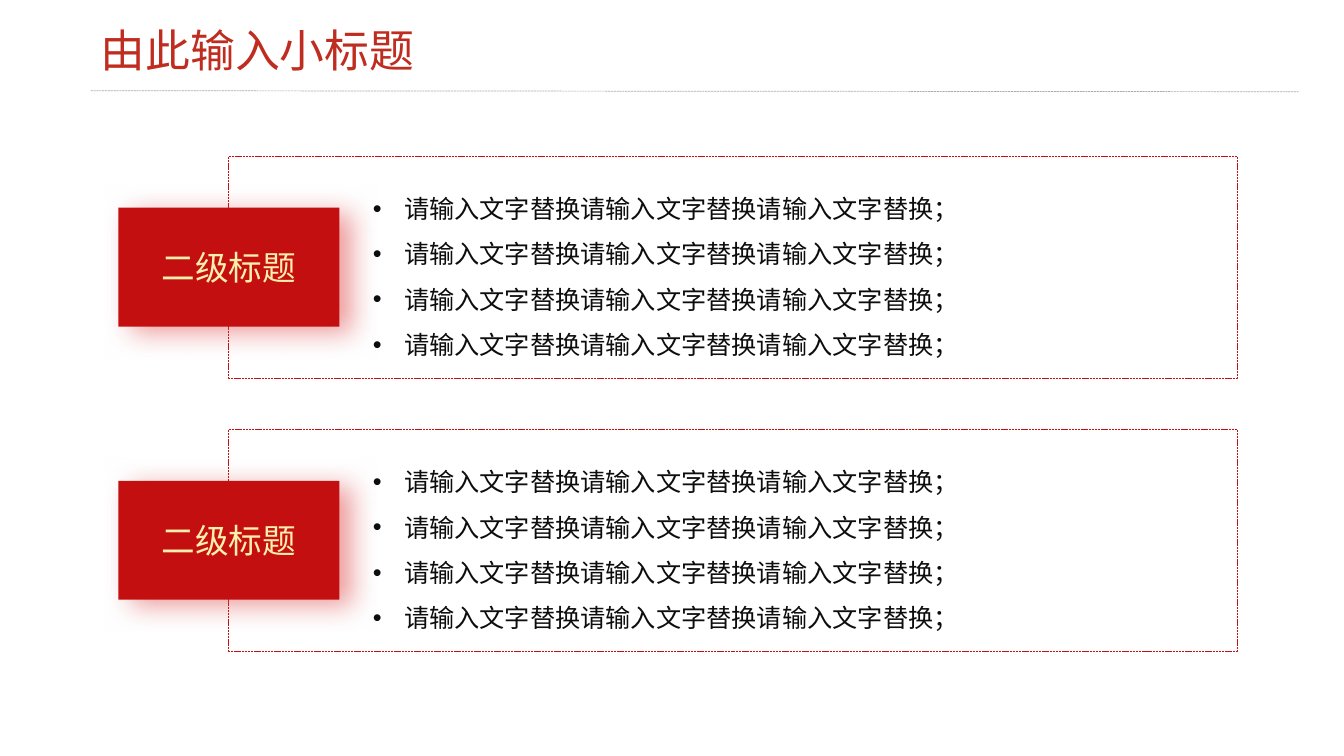
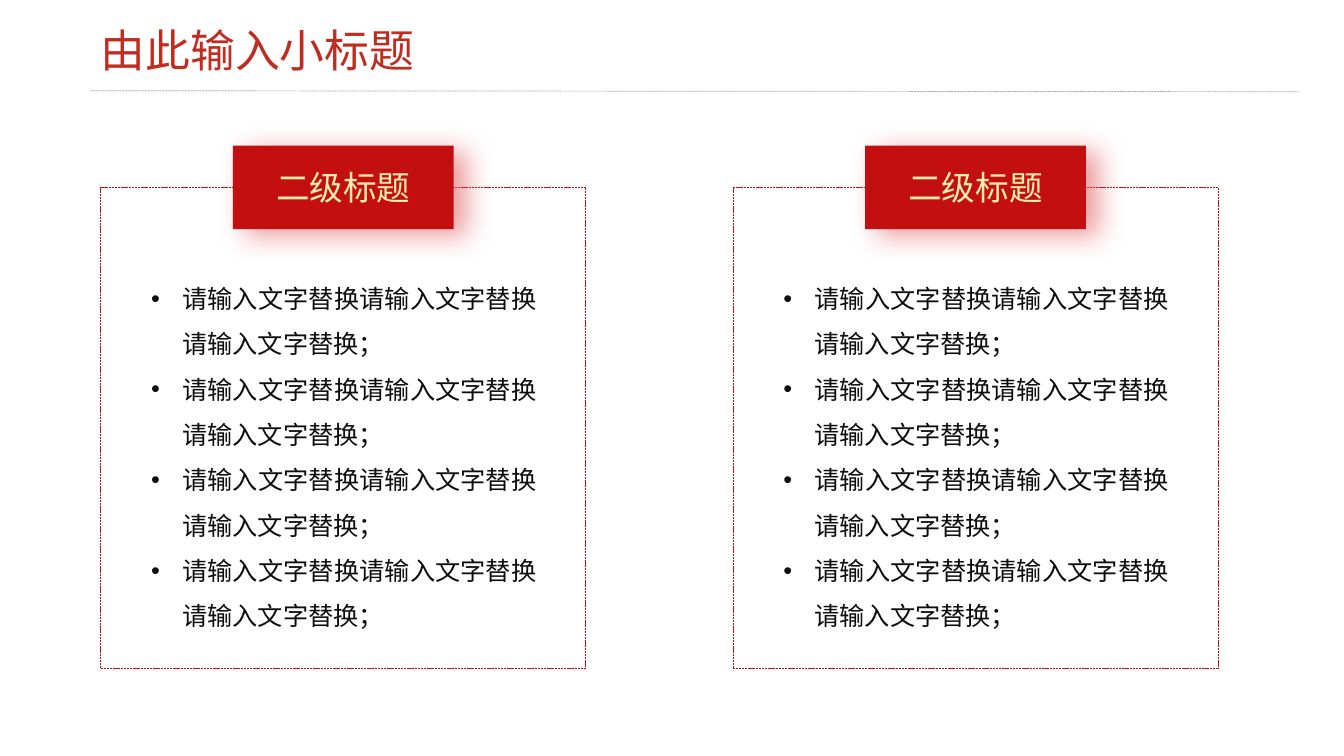
from lxml import etree
from pptx import Presentation
from pptx.dml.color import RGBColor
from pptx.enum.dml import MSO_LINE
from pptx.enum.shapes import MSO_CONNECTOR, MSO_SHAPE
from pptx.enum.text import MSO_ANCHOR, MSO_AUTO_SIZE, PP_ALIGN
from pptx.oxml.ns import qn
from pptx.util import Inches, Pt

RECTANGLE = MSO_SHAPE.RECTANGLE
STRAIGHT = MSO_CONNECTOR.STRAIGHT
DASH = MSO_LINE.SQUARE_DOT
MIDDLE = MSO_ANCHOR.MIDDLE
GROW = MSO_AUTO_SIZE.SHAPE_TO_FIT_TEXT
LEFT, CENTER, JUSTIFY = PP_ALIGN.LEFT, PP_ALIGN.CENTER, PP_ALIGN.JUSTIFY

FONT = "Noto Sans CJK SC"
RED = "C30F0F"
TITLE_RED = "BF2D20"
CREAM = "FEEFAC"
INK = "0D0D0D"
RULE_GREY = "AFABAB"
GLOW = "DF4849"

TITLE = "由此输入小标题"
HEADING = "二级标题"
BULLETS = ["请输入文字替换" * 3 + "；"] * 4

BADGE_WIDTH = 2.19
BULLET_INDENT = 0.31


def color(value):
    """Turn a hex string into a colour."""
    return RGBColor.from_string(value)


def place(left, top, width, height):
    """Turn a box in inches into lengths."""
    return [Inches(part) for part in (left, top, width, height)]


def style_line(line, value):
    """Give a line the thin dashed style."""
    line.color.rgb = color(value)
    line.width = Pt(0.5)
    line.dash_style = DASH


def add_bullet(para):
    """Give a paragraph a hanging round bullet."""
    props = para._p.get_or_add_pPr()
    props.set("marL", str(Inches(BULLET_INDENT)))
    props.set("indent", str(-Inches(BULLET_INDENT)))
    etree.SubElement(props, qn("a:buFont"), typeface="Arial")
    etree.SubElement(props, qn("a:buChar"), char="•")


def write(frame, lines, size, value, align=LEFT, spacing=None, bullet=False):
    """Fill a text frame with one formatted paragraph per line."""
    frame.word_wrap = True
    for index, line in enumerate(lines):
        para = frame.paragraphs[0] if index == 0 else frame.add_paragraph()
        para.alignment = align
        if bullet:
            add_bullet(para)
        if spacing:
            para.line_spacing = spacing
        span = para.add_run()
        span.text = line
        span.font.size = Pt(size)
        span.font.color.rgb = color(value)
        span.font.name = FONT
        etree.SubElement(span._r.get_or_add_rPr(), qn("a:ea"), typeface=FONT)


def add_text(shapes, box, lines, **style):
    """Add a text box that grows with its text."""
    frame = shapes.add_textbox(*place(*box)).text_frame
    write(frame, lines, **style)
    frame.auto_size = GROW


def add_glow(shape):
    """Give a shape a soft red outer shadow."""
    shape.shadow.inherit = False
    effects = shape._element.spPr.find(qn("a:effectLst"))
    shadow = etree.SubElement(
        effects, qn("a:outerShdw"), blurRad=str(Pt(20)), dist=str(Pt(10)),
        dir=str(25 * 60000), algn="ctr", rotWithShape="0")
    tint = etree.SubElement(shadow, qn("a:srgbClr"), val=GLOW)
    etree.SubElement(tint, qn("a:alpha"), val="55000")


def add_frame(shapes, box):
    """Add a dashed outline."""
    outline = shapes.add_shape(RECTANGLE, *place(*box))
    outline.shadow.inherit = False
    outline.fill.background()
    style_line(outline.line, RED)


def add_badge(shapes, center_x, center_y, height):
    """Add a red heading block around a centre point."""
    badge = shapes.add_shape(RECTANGLE, *place(
        center_x - BADGE_WIDTH / 2, center_y - height / 2, BADGE_WIDTH, height))
    badge.fill.solid()
    badge.fill.fore_color.rgb = color(RED)
    badge.line.fill.background()
    add_glow(badge)
    write(badge.text_frame, [HEADING], size=24, value=CREAM, align=CENTER)
    badge.text_frame.vertical_anchor = MIDDLE


def add_bullets(shapes, box):
    """Add the bulleted body text."""
    add_text(shapes, box, BULLETS, size=18, value=INK, align=JUSTIFY,
             spacing=1.5, bullet=True)


def add_row_card(page, left, top, width, height):
    """Add a wide card with its badge on the left edge."""
    shapes = page.shapes.add_group_shape().shapes
    add_frame(shapes, (left, top, width, height))
    add_badge(shapes, left, top + height / 2, 1.18)
    add_bullets(shapes, (left + 1.33, top + 0.17, 6.67, height - 0.33))


def add_column_card(page, left, top, width, height):
    """Add a tall card with its badge on the top edge."""
    shapes = page.shapes.add_group_shape().shapes
    add_frame(shapes, (left, top, width, height))
    add_badge(shapes, left + width / 2, top, 0.83)
    add_bullets(shapes, (left + 0.4, top + 0.75, width - 0.79, height - 1.09))


def add_page(deck):
    """Add a blank slide with the shared title and rule."""
    page = deck.slides.add_slide(deck.slide_layouts[6])
    rule = page.shapes.add_connector(STRAIGHT, *place(0.9, 0.9, 12.88, 0.91))
    style_line(rule.line, RULE_GREY)
    etree.SubElement(rule._element.spPr, qn("a:effectLst"))
    add_text(page.shapes, (0.9, 0.18, 3.57, 0.64), [TITLE], size=32,
             value=TITLE_RED)
    return page


def build_rows(deck):
    """Build the slide with two stacked cards."""
    page = add_page(deck)
    for index in range(2):
        add_row_card(page, 2.27, 1.55 + index * 2.71, 10, 2.2)


def build_columns(deck):
    """Build the slide with two cards side by side."""
    page = add_page(deck)
    for index in range(2):
        add_column_card(page, 1 + index * 6.27, 1.86, 4.81, 4.77)


def main():
    """Build and save the deck."""
    deck = Presentation()
    deck.slide_width, deck.slide_height = Inches(13.33), Inches(7.5)
    build_rows(deck)
    build_columns(deck)
    deck.save("out.pptx")


if __name__ == "__main__":
    main()
